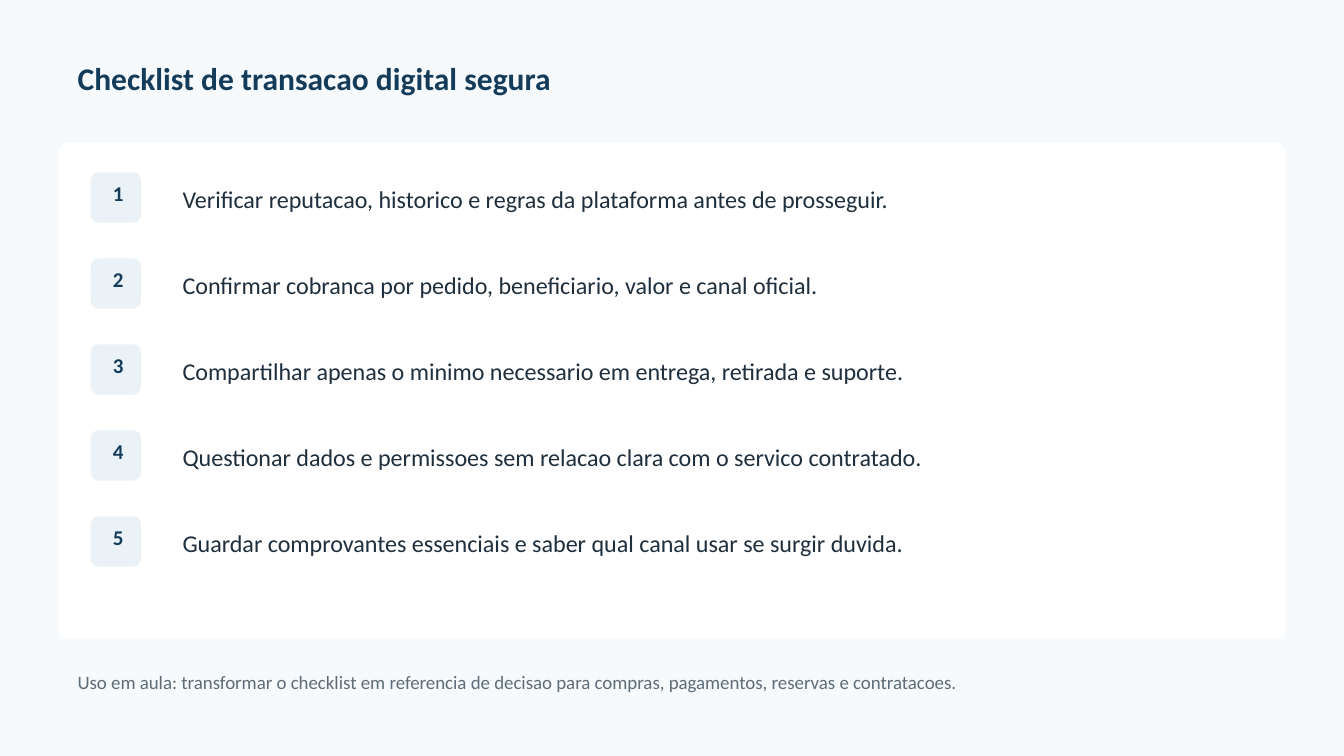
"""Build the slide with the checklist for a safe digital transaction."""
from pptx import Presentation
from pptx.dml.color import RGBColor
from pptx.enum.shapes import MSO_SHAPE
from pptx.enum.text import MSO_ANCHOR, PP_ALIGN
from pptx.util import Inches, Pt

ROUNDED = MSO_SHAPE.ROUNDED_RECTANGLE
TOP, MIDDLE = MSO_ANCHOR.TOP, MSO_ANCHOR.MIDDLE
LEFT, CENTER = PP_ALIGN.LEFT, PP_ALIGN.CENTER

BACKGROUND = RGBColor(0xF7, 0xFA, 0xFC)
WHITE = RGBColor(0xFF, 0xFF, 0xFF)
BADGE = RGBColor(0xEA, 0xF2, 0xF7)
NAVY = RGBColor(0x14, 0x3C, 0x5A)
INK = RGBColor(0x1F, 0x2F, 0x3D)
GRAY = RGBColor(0x5D, 0x6C, 0x78)

FONT = "Calibri"
FIRST_ROW = 1.71
ROW_PITCH = 0.853
CHECKLIST = [
    "Verificar reputacao, historico e regras da plataforma antes de prosseguir.",
    "Confirmar cobranca por pedido, beneficiario, valor e canal oficial.",
    "Compartilhar apenas o minimo necessario em entrega, retirada e suporte.",
    "Questionar dados e permissoes sem relacao clara com o servico contratado.",
    "Guardar comprovantes essenciais e saber qual canal usar se surgir duvida.",
]


def add_text(s, text, x, y, w, h, *, size, color, bold=False, align=LEFT, anchor=TOP):
    """Add a one-paragraph text box."""
    tf = s.shapes.add_textbox(Inches(x), Inches(y), Inches(w), Inches(h)).text_frame
    tf.word_wrap = True
    tf.vertical_anchor = anchor
    tf.margin_left = tf.margin_right = Inches(0.19)
    tf.margin_top = tf.margin_bottom = Inches(0.15)
    p = tf.paragraphs[0]
    p.alignment = align
    r = p.add_run()
    r.text = text
    r.font.name = FONT
    r.font.size = Pt(size)
    r.font.bold = bold
    r.font.color.rgb = color


def add_panel(s, x, y, w, h, *, fill, radius):
    """Add a borderless rounded rectangle with a corner radius in inches."""
    sp = s.shapes.add_shape(ROUNDED, Inches(x), Inches(y), Inches(w), Inches(h))
    sp.adjustments[0] = radius / min(w, h)
    sp.shadow.inherit = False
    sp.fill.solid()
    sp.fill.fore_color.rgb = fill
    sp.line.fill.background()


def add_item(s, number, text, y):
    """Add a numbered badge and its checklist sentence."""
    add_panel(s, 0.9, y, 0.5, 0.5, fill=BADGE, radius=0.08)
    add_text(s, str(number), 0.98, y + 0.04, 0.33, 0.33, size=15, color=NAVY,
             bold=True, align=CENTER, anchor=MIDDLE)
    add_text(s, text, 1.62, y - 0.02, 10.21, 0.52, size=17.2, color=INK)


def main():
    """Build and save the presentation."""
    prs = Presentation()
    prs.slide_width, prs.slide_height = Inches(13.33), Inches(7.5)
    s = prs.slides.add_slide(prs.slide_layouts[6])
    s.background.fill.solid()
    s.background.fill.fore_color.rgb = BACKGROUND

    add_text(s, "Checklist de transacao digital segura", 0.58, 0.44, 9.38, 0.58,
             size=22.5, color=NAVY, bold=True)
    add_panel(s, 0.58, 1.42, 12.17, 4.92, fill=WHITE, radius=0.08)
    for i, text in enumerate(CHECKLIST):
        add_item(s, i + 1, text, FIRST_ROW + i * ROW_PITCH)
    add_text(s, "Uso em aula: transformar o checklist em referencia de decisao para "
             "compras, pagamentos, reservas e contratacoes.", 0.58, 6.54, 11.46, 0.4,
             size=13.5, color=GRAY)
    prs.save("out.pptx")


if __name__ == "__main__":
    main()
